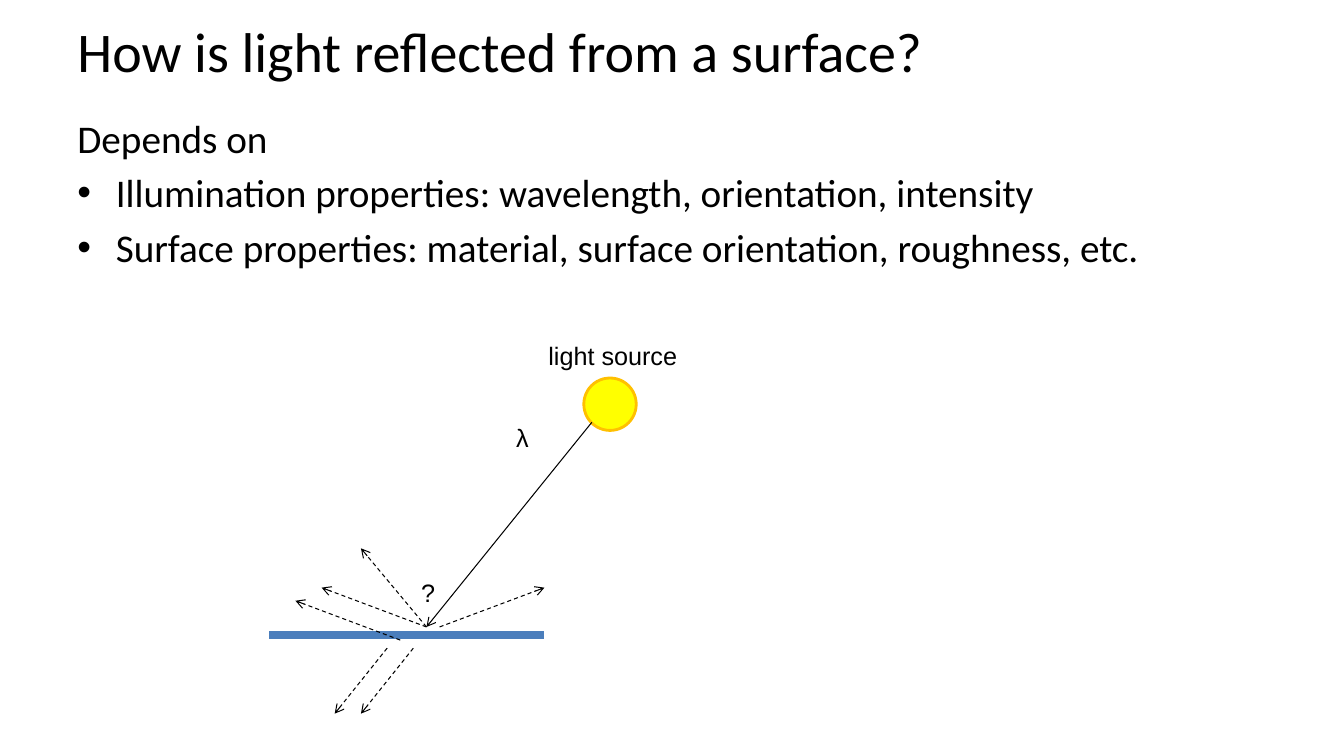
from dataclasses import dataclass

from lxml.etree import SubElement
from pptx import Presentation
from pptx.dml.color import RGBColor
from pptx.enum.dml import MSO_LINE
from pptx.enum.shapes import MSO_CONNECTOR, MSO_SHAPE
from pptx.enum.text import MSO_ANCHOR
from pptx.oxml.ns import qn
from pptx.util import Inches, Pt


@dataclass(frozen=True)
class Theme:
    ink: RGBColor = RGBColor(0, 0, 0)
    surface: RGBColor = RGBColor(0x4B, 0x7E, 0xBC)
    sun: RGBColor = RGBColor(0xFF, 0xFF, 0)
    sun_edge: RGBColor = RGBColor(0xFF, 0xC0, 0)
    text_font: str = "Calibri"
    label_font: str = "Arial"
    title_size: int = 40
    body_size: int = 28
    label_size: int = 18
    ray_width: float = 0.75
    surface_width: float = 6
    sun_edge_width: float = 2


THEME = Theme()
BULLET_INDENT = 0.38


def add_text(slide, box, lines, font, size, wrap=True):
    """Add a text box with one paragraph per line and return its text frame."""
    text_frame = slide.shapes.add_textbox(*map(Inches, box)).text_frame
    text_frame.word_wrap = wrap
    text_frame.text = "\n".join(lines)
    for paragraph in text_frame.paragraphs:
        for run in paragraph.runs:
            run.font.name = font
            run.font.size = Pt(size)
            run.font.color.rgb = THEME.ink
    return text_frame


def add_bullet(paragraph):
    properties = paragraph._p.get_or_add_pPr()
    properties.set("marL", str(Inches(BULLET_INDENT)))
    properties.set("indent", str(-Inches(BULLET_INDENT)))
    SubElement(properties, qn("a:buFont"), typeface="Arial")
    SubElement(properties, qn("a:buChar"), char="•")


def add_line(slide, start, end, color, width):
    line = slide.shapes.add_connector(
        MSO_CONNECTOR.STRAIGHT, *map(Inches, (*start, *end)))
    line.line.color.rgb = color
    line.line.width = Pt(width)
    SubElement(line._element.spPr, qn("a:effectLst"))
    return line


def add_ray(slide, start, end, dashed=True):
    ray = add_line(slide, start, end, THEME.ink, THEME.ray_width)
    if dashed:
        ray.line.dash_style = MSO_LINE.DASH
    SubElement(ray.line._get_or_add_ln(), qn("a:tailEnd"), type="arrow")


def add_title(slide, box):
    text_frame = add_text(slide, box, ["How is light reflected from a surface?"],
                          THEME.text_font, THEME.title_size)
    text_frame.vertical_anchor = MSO_ANCHOR.MIDDLE


def add_body(slide, box):
    lines = [
        "Depends on",
        "Illumination properties: wavelength, orientation, intensity",
        "Surface properties: material, surface orientation, roughness, etc.",
    ]
    text_frame = add_text(slide, box, lines, THEME.text_font, THEME.body_size)
    for paragraph in text_frame.paragraphs:
        paragraph.space_before = Pt(0.2 * THEME.body_size)
    for paragraph in text_frame.paragraphs[1:]:
        add_bullet(paragraph)


def add_reflection_diagram(slide, left, top):
    """Draw the light source, the surface and the possible reflected rays."""
    def at(x, y):
        return left + x, top + y

    add_line(slide, at(0, 2.97), at(2.73, 2.97),
             THEME.surface, THEME.surface_width)

    sun = slide.shapes.add_shape(
        MSO_SHAPE.OVAL, *map(Inches, (*at(3.12, 0.42), 0.52, 0.52)))
    sun.shadow.inherit = False
    sun.fill.solid()
    sun.fill.fore_color.rgb = THEME.sun
    sun.line.color.rgb = THEME.sun_edge
    sun.line.width = Pt(THEME.sun_edge_width)

    hit = (1.56, 2.89)
    add_ray(slide, at(3.2, 0.86), at(*hit), dashed=False)
    scattered_rays = [
        (hit, (0.91, 2.11)),
        (hit, (0.52, 2.5)),
        ((1.69, 2.89), (2.73, 2.5)),
        ((1.43, 3.1), (0.91, 3.75)),
        ((1.17, 3.1), (0.65, 3.75)),
        ((1.3, 3.02), (0.26, 2.63)),
    ]
    for start, end in scattered_rays:
        add_ray(slide, at(*start), at(*end))

    labels = [
        ("light source", 2.67, 0, 1.5, True),
        ("λ", 2.35, 0.81, 0.33, False),
        ("?", 1.41, 2.35, 0.36, True),
    ]
    for text, x, y, width, wrap in labels:
        add_text(slide, (*at(x, y), width, 0.4), [text],
                 THEME.label_font, THEME.label_size, wrap)


def main():
    presentation = Presentation()
    presentation.slide_width = Inches(13.33)
    presentation.slide_height = Inches(7.5)
    slide = presentation.slides.add_slide(presentation.slide_layouts[6])
    add_title(slide, (0.67, 0, 12, 1))
    add_body(slide, (0.67, 1.08, 12, 5.62))
    add_reflection_diagram(slide, 2.67, 3.33)
    presentation.save("out.pptx")


if __name__ == "__main__":
    main()
